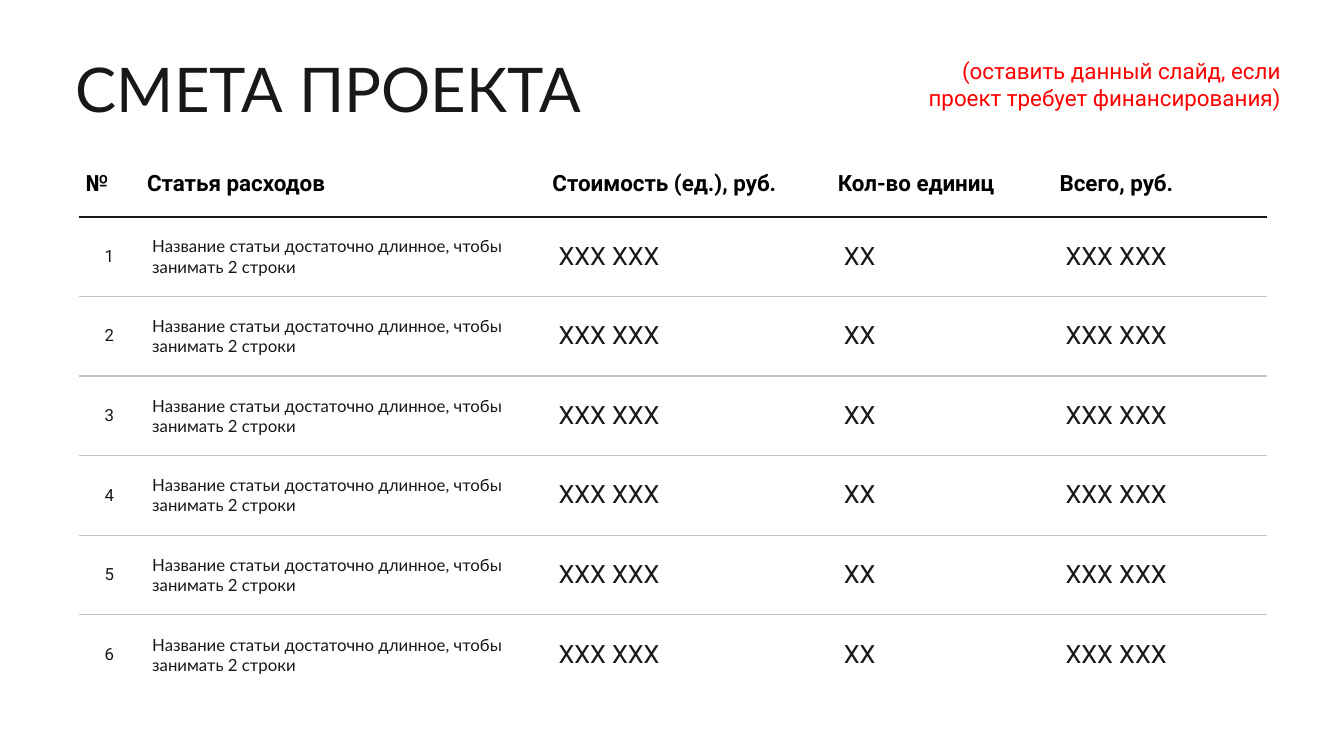
import lxml.etree
import pptx
import pptx.dml.color
import pptx.enum.text
import pptx.oxml.ns
import pptx.util

PX = 9144
INK, GREY, RED, BLACK = "181818", "C5C5C5", "FF0000", "000000"
ALIGN = pptx.enum.text.PP_ALIGN
ANCHOR = pptx.enum.text.MSO_ANCHOR
HEADERS = ["№", "Статья расходов", "Стоимость (ед.), руб.", "Кол-во единиц", "Всего, руб."]
COLUMNS = [61, 402, 283, 220, 213]
ITEM = "Название статьи достаточно длинное, чтобы занимать 2 строки"
ITEM_COUNT = 6
HEADER_HEIGHT, ITEM_HEIGHT = 66, 79


def px(n):
    """Turn pixels into EMU."""
    return pptx.util.Emu(n * PX)


def rgb(value):
    """Turn a hex string into a colour."""
    return pptx.dml.color.RGBColor.from_string(value)


def write(tf, text, size=16, font="Roboto", color=INK, bold=False, align=ALIGN.LEFT, spacing=1.0):
    """Write one formatted paragraph into a text frame."""
    tf.word_wrap = True
    p = tf.paragraphs[0]
    p.alignment = align
    p.line_spacing = spacing
    r = p.add_run()
    r.text = text
    r.font.size = pptx.util.Pt(size)
    r.font.name = font
    r.font.bold = bold
    r.font.color.rgb = rgb(color)


def place(sp, left, top, width, height):
    """Move and size a shape."""
    sp.left, sp.top, sp.width, sp.height = map(px, (left, top, width, height))


def add_title(s, text):
    """Fill the title placeholder."""
    sp = s.shapes.title
    place(sp, 65, 52, 1267, 79)
    sp.text_frame.auto_size = pptx.enum.text.MSO_AUTO_SIZE.NONE
    sp.text_frame.vertical_anchor = ANCHOR.MIDDLE
    write(sp.text_frame, text, size=44, font="Lato", spacing=0.9)


def add_note(s, text):
    """Add the red remark at the top right."""
    sp = s.shapes.add_textbox(px(871), px(52), px(409), px(64))
    write(sp.text_frame, text, color=RED, align=ALIGN.RIGHT)


def set_border(cell, side, line=None):
    """Draw one cell border, or clear it when no line is given."""
    tag = pptx.oxml.ns.qn
    ln = lxml.etree.SubElement(cell._tc.get_or_add_tcPr(), tag(f"a:ln{side}"))
    if line is None:
        lxml.etree.SubElement(ln, tag("a:noFill"))
        return
    color, width = line
    ln.set("w", str(pptx.util.Pt(width)))
    fill = lxml.etree.SubElement(ln, tag("a:solidFill"))
    lxml.etree.SubElement(fill, tag("a:srgbClr"), val=color)


def fill_cell(cell, text, margins, top=None, bottom=None, **style):
    """Set a cell's text, margins and borders."""
    side, edge = map(px, margins)
    cell.margin_left = cell.margin_right = side
    cell.margin_top = cell.margin_bottom = edge
    cell.vertical_anchor = ANCHOR.MIDDLE
    for name, line in zip("LRTB", (None, None, top, bottom)):
        set_border(cell, name, line)
    cell.fill.background()
    write(cell.text_frame, text, **style)


def add_budget(s):
    """Add the table of expenses."""
    height = HEADER_HEIGHT + ITEM_COUNT * ITEM_HEIGHT
    frame = s.shapes.add_table(ITEM_COUNT + 1, len(COLUMNS), px(78), px(149), px(sum(COLUMNS)), px(height))
    table = frame.table
    table.horz_banding = False
    table.first_row = False
    for column, width in zip(table.columns, COLUMNS):
        column.width = px(width)
    for i, row in enumerate(table.rows):
        row.height = px(ITEM_HEIGHT if i else HEADER_HEIGHT)
    heavy, light = (INK, 1.5), (GREY, 1)
    for j, header in enumerate(HEADERS):
        fill_cell(table.cell(0, j), header, (7, 0), bottom=heavy, color=BLACK, bold=True)
    small, large = (12, 6), (13, 7)
    for i in range(1, ITEM_COUNT + 1):
        lines = {"top": heavy if i == 1 else light, "bottom": light if i < ITEM_COUNT else None}
        fill_cell(table.cell(i, 0), str(i), small, size=12, align=ALIGN.CENTER, **lines)
        fill_cell(table.cell(i, 1), ITEM, small, size=12, font="Lato", **lines)
        for j, value in enumerate(["ХХХ ХХХ", "ХХ", "ХХХ ХХХ"], 2):
            fill_cell(table.cell(i, j), value, large, size=18, **lines)


def main():
    """Build the project budget slide."""
    prs = pptx.Presentation()
    prs.slide_width, prs.slide_height = px(1333), px(750)
    s = prs.slides.add_slide(prs.slide_layouts[5])
    add_title(s, "СМЕТА ПРОЕКТА")
    add_note(s, "(оставить данный слайд, если проект требует финансирования)")
    add_budget(s)
    prs.save("out.pptx")


if __name__ == "__main__":
    main()
